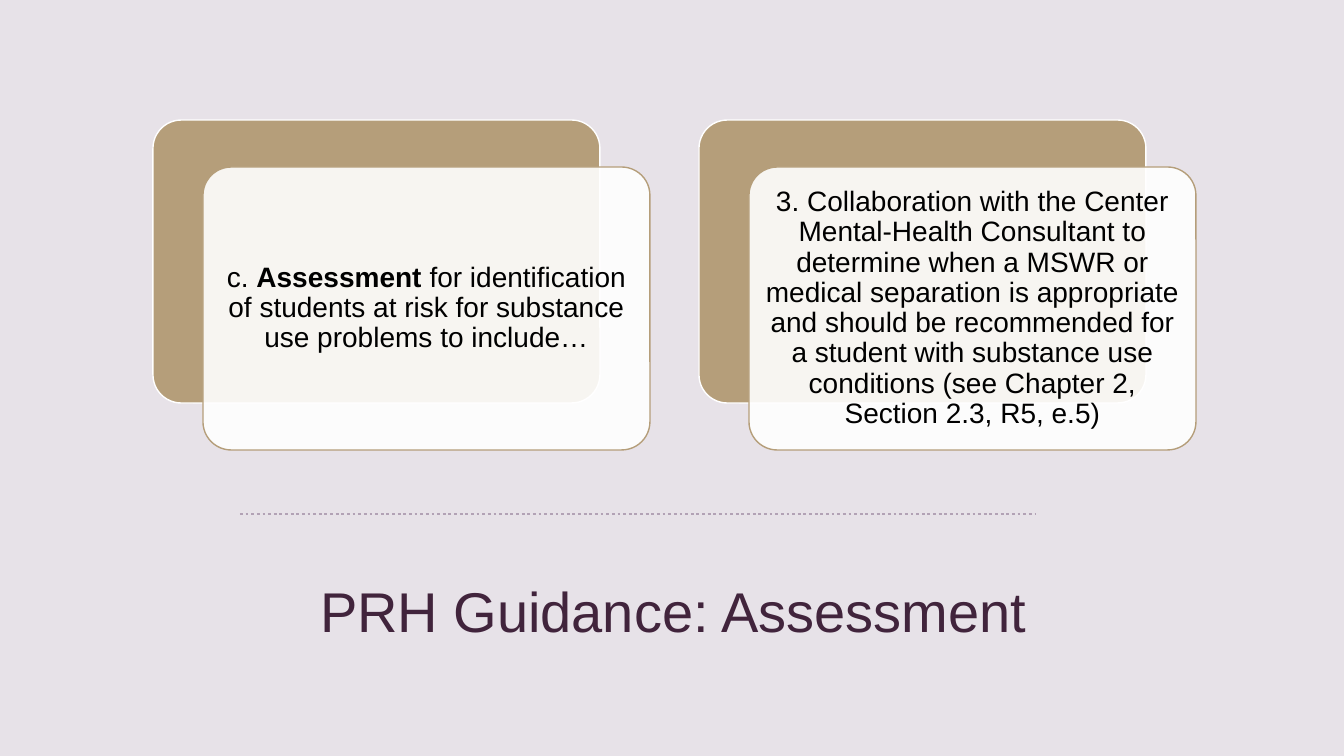
from lxml import etree
from pptx import Presentation
from pptx.dml.color import RGBColor
from pptx.enum.dml import MSO_LINE
from pptx.enum.shapes import MSO_CONNECTOR, MSO_SHAPE
from pptx.enum.text import MSO_ANCHOR, PP_ALIGN
from pptx.oxml.ns import qn
from pptx.util import Emu, Pt

LAVENDER = RGBColor(0xE7, 0xE2, 0xE8)
MAUVE = RGBColor(0xB2, 0xA2, 0xB5)
PLUM = RGBColor(0x41, 0x24, 0x3C)
TAN = RGBColor(0xB5, 0x9E, 0x7A)
WHITE = RGBColor(0xFF, 0xFF, 0xFF)
BLACK = RGBColor(0x00, 0x00, 0x00)

CARD_LEFT, CARD_TOP, CARD_WIDTH, CARD_HEIGHT = 153, 120, 447, 283
CARD_PITCH = 546
FRONT_SHIFT_X, FRONT_SHIFT_Y = 50, 47
CARDS = [
    [("c. ", False), ("Assessment ", True),
     ("for identification of students at risk for substance use problems to include…", False)],
    [("3. Collaboration with the Center Mental-Health Consultant to determine when "
      "a MSWR or medical separation is appropriate and should be recommended for a "
      "student with substance use conditions (see Chapter 2, Section 2.3, R5, e.5)", False)],
]


def px(*lengths):
    """Turn pixels, 1344 across the slide, into a list of EMU lengths."""
    return [Emu(round(length * 12192000 / 1344)) for length in lengths]


def write_text(shape, runs, size, color, inset=8, line_spacing=0.9):
    """Fill a shape with one centred paragraph of (text, bold) runs."""
    frame = shape.text_frame
    frame.word_wrap = True
    frame.vertical_anchor = MSO_ANCHOR.MIDDLE
    frame.margin_left = frame.margin_right = frame.margin_top = frame.margin_bottom = px(inset)[0]
    paragraph = frame.paragraphs[0]
    paragraph.alignment = PP_ALIGN.CENTER
    paragraph.line_spacing = line_spacing
    for text, bold in runs:
        run = paragraph.add_run()
        run.text = text
        run.font.name = "Arial"
        run.font.size = Pt(size)
        run.font.bold = bold
        run.font.color.rgb = color


presentation = Presentation()
presentation.slide_width, presentation.slide_height = px(1344, 756)
slide = presentation.slides.add_slide(presentation.slide_layouts[6])
slide.background.fill.solid()
slide.background.fill.fore_color.rgb = LAVENDER

# Title and the dotted rule above it
title = slide.shapes.add_textbox(*px(106, 552, 1134, 116))
write_text(title, [("PRH Guidance: Assessment", False)], size=40, color=PLUM, line_spacing=1.0)

rule = slide.shapes.add_connector(MSO_CONNECTOR.STRAIGHT, *px(240, 514, 1035, 514))
rule.line.color.rgb = MAUVE
rule.line.width = Pt(2)
rule.line.dash_style = MSO_LINE.ROUND_DOT
etree.SubElement(rule._element.spPr, qn("a:effectLst"))

# Each card is a tan plate with a translucent white panel in front
for index, runs in enumerate(CARDS):
    left = CARD_LEFT + index * CARD_PITCH
    layers = [
        (left, CARD_TOP, TAN, WHITE),
        (left + FRONT_SHIFT_X, CARD_TOP + FRONT_SHIFT_Y, WHITE, TAN),
    ]
    for x, y, fill_color, line_color in layers:
        panel = slide.shapes.add_shape(
            MSO_SHAPE.ROUNDED_RECTANGLE, *px(x, y, CARD_WIDTH, CARD_HEIGHT))
        panel.adjustments[0] = 0.1
        panel.shadow.inherit = False
        panel.fill.solid()
        panel.fill.fore_color.rgb = fill_color
        panel.line.color.rgb = line_color
        panel.line.width = Pt(1)

    # The last panel drawn is the front one
    fill_element = panel._element.spPr.find(qn("a:solidFill"))
    etree.SubElement(fill_element[0], qn("a:alpha"), val="90000")
    write_text(panel, runs, size=20, color=BLACK)

presentation.save("out.pptx")
